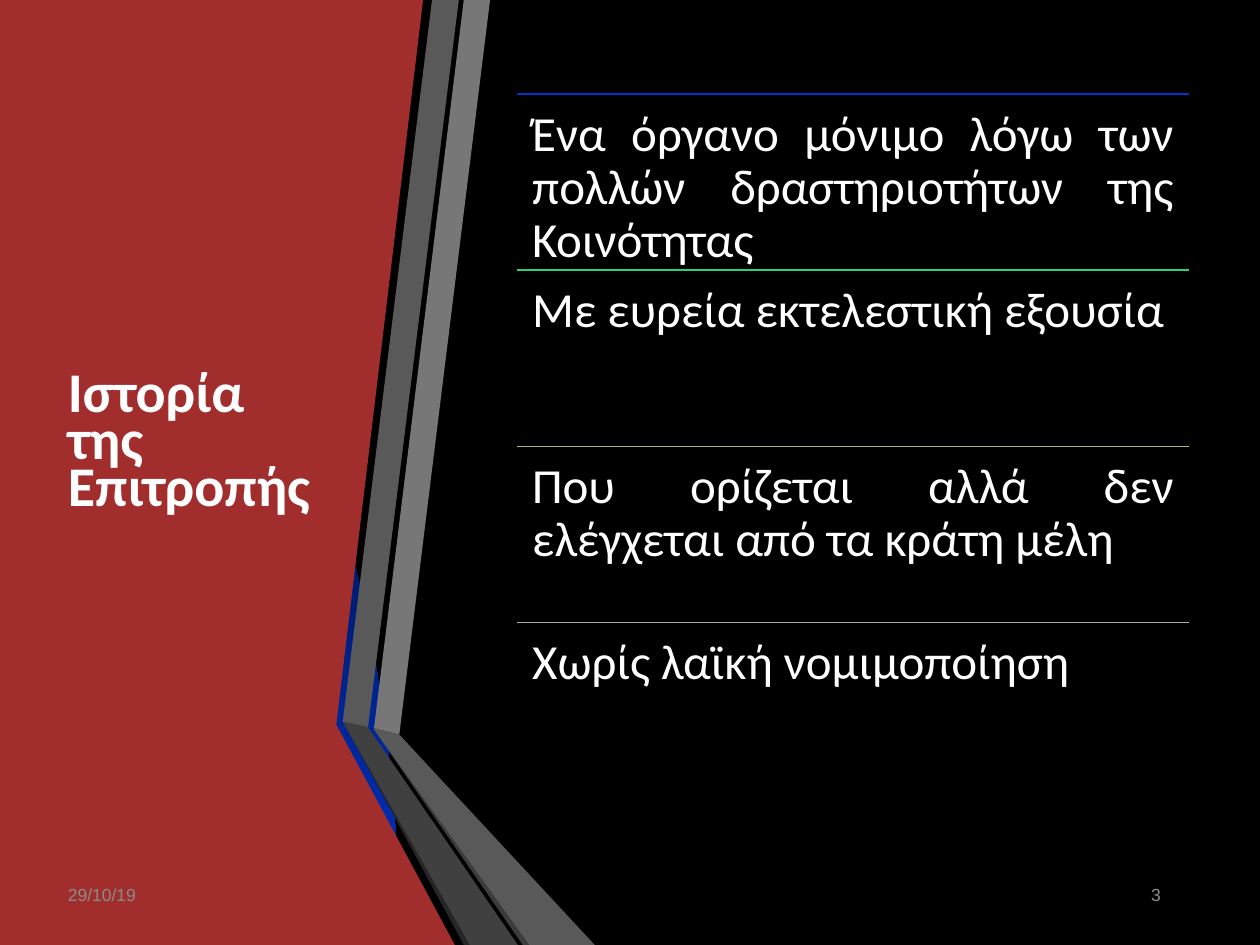
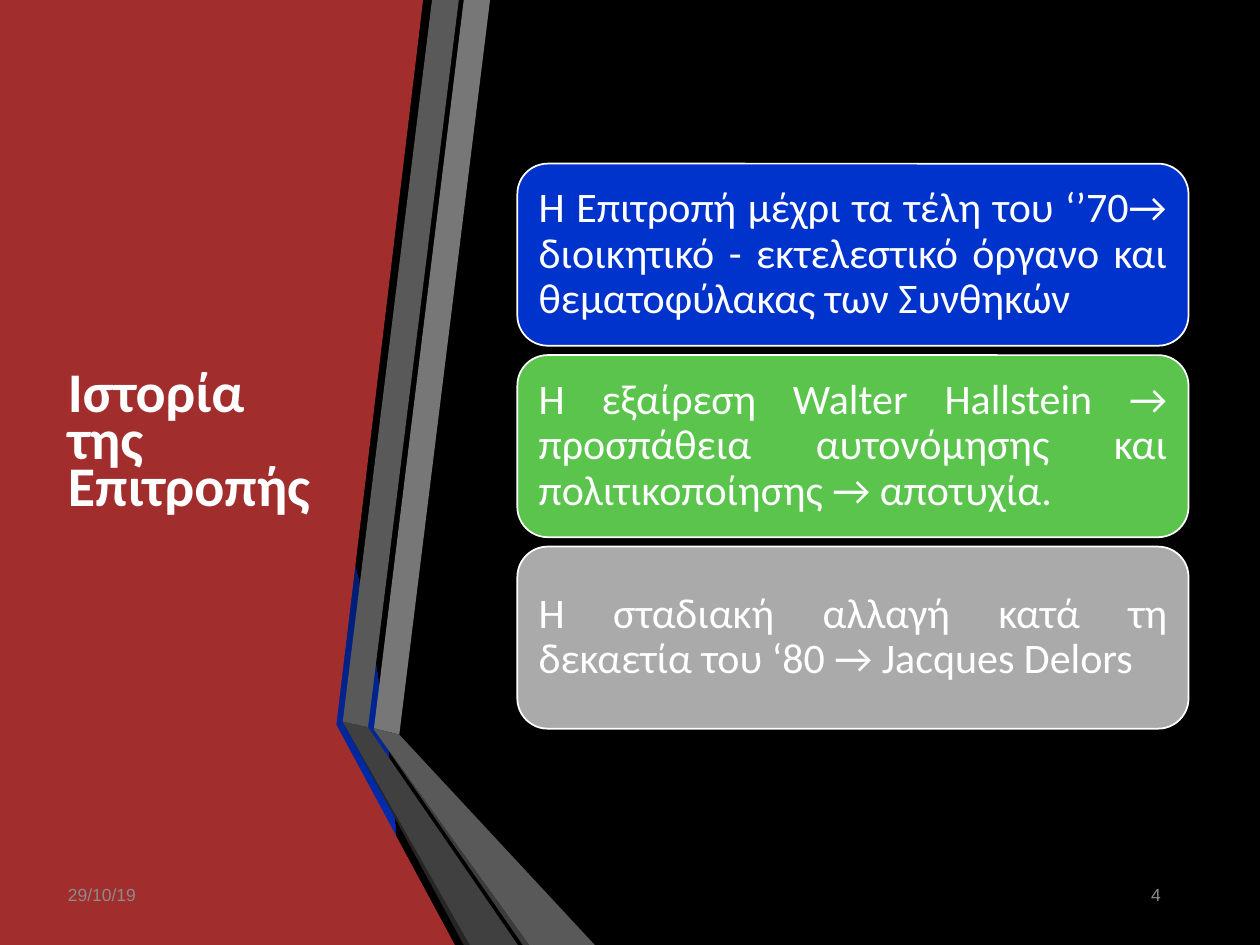
import pptx
import pptx.util
import pptx.dml.color
import pptx.enum.shapes
import pptx.enum.text
import pptx.oxml.xmlchemy

Cm = pptx.util.Cm
Pt = pptx.util.Pt
RGBColor = pptx.dml.color.RGBColor
Align = pptx.enum.text.PP_ALIGN
Anchor = pptx.enum.text.MSO_ANCHOR

BLACK = RGBColor(0x00, 0x00, 0x00)
WHITE = RGBColor(0xFF, 0xFF, 0xFF)
BLUE = RGBColor(0x00, 0x33, 0xCC)
RED = RGBColor(0xA2, 0x2D, 0x2D)
MINT = RGBColor(0x2A, 0xD0, 0x7D)
OLIVE = RGBColor(0xA5, 0xB7, 0x6F)
GREEN = RGBColor(0x5B, 0xC4, 0x4D)
SILVER = RGBColor(0xAA, 0xAA, 0xAA)
MUTED = RGBColor(0x8C, 0x8C, 0x8C)
LIGHT = RGBColor(0x77, 0x77, 0x77)
GREY = RGBColor(0x59, 0x59, 0x59)
DARK = RGBColor(0x40, 0x40, 0x40)
EDGE = RGBColor(0x3C, 0x3C, 0x3C)
SHADE = RGBColor(0x26, 0x26, 0x26)

WIDE, HIGH = 25.4, 19.05
LEFT, SPAN = 10.43, 13.53
TITLE = "Ιστορία της Επιτροπής"
DATE = "29/10/19"

CURVE = [(0, HIGH)]
for step in range(33):
    t = step / 32
    u = 1 - t
    CURVE.append((3 * u * u * t * 4.45 + (3 * u * t * t + t ** 3) * 8.05,
                  (u ** 3 + 3 * u * u * t) * 2.34 + 3 * u * t * t * 9.83 + t ** 3 * HIGH))

BANDS = [
    (RED, [(0, 0), (8.53, 0), (6.78, 14.61), (9.17, HIGH), (0, HIGH)]),
    (LIGHT, [(7.54, 14.68), (8.05, 14.81), (9.88, 0), (9.35, 0)]),
    (GREY, [(9.25, 0), (8.71, 0), (6.91, 14.55), (7.42, 14.66)]),
    (SHADE, [(6.91, 14.55), (9.35, HIGH), (9.47, HIGH)]),
    (EDGE, [(7.54, 14.71), (10.54, HIGH), (10.67, HIGH)]),
    (GREY, [(7.54, 14.71), (10.67, HIGH), (11.99, HIGH), (8.05, 14.81), (7.54, 14.68)]),
    (DARK, [(10.44, HIGH), (7.52, 14.81), (7.42, 14.66), (6.91, 14.55), (9.47, HIGH)]),
]

POINTS = [
    (BLUE, "Ένα όργανο μόνιμο λόγω των πολλών δραστηριοτήτων της Κοινότητας"),
    (MINT, "Με ευρεία εκτελεστική εξουσία"),
    (OLIVE, "Που ορίζεται αλλά δεν ελέγχεται από τα κράτη μέλη"),
    (SILVER, "Χωρίς λαϊκή νομιμοποίηση"),
]
CARDS = [
    (BLUE, "Η Επιτροπή μέχρι τα τέλη του ‘’70→ διοικητικό - εκτελεστικό όργανο και θεματοφύλακας των Συνθηκών"),
    (GREEN, "Η εξαίρεση Walter Hallstein → προσπάθεια αυτονόμησης και πολιτικοποίησης → αποτυχία."),
    (SILVER, "Η σταδιακή αλλαγή κατά τη δεκαετία του ‘80 → Jacques Delors"),
]


def trace(slide, spots):
    spots = [(Cm(x), Cm(y)) for x, y in spots]
    pen = slide.shapes.build_freeform(*spots[0], scale=1.0)
    pen.add_line_segments(spots[1:], close=True)
    shape = pen.convert_to_shape()
    shape.line.fill.background()
    shape.shadow.inherit = False
    return shape


def write(shape, text, size, align, tone=WHITE, face="Calibri", bold=False,
          space=0.9, anchor=Anchor.MIDDLE, pad=(0.25, 0.13)):
    frame = shape.text_frame
    frame.word_wrap = True
    frame.auto_size = pptx.enum.text.MSO_AUTO_SIZE.NONE
    frame.vertical_anchor = anchor
    frame.margin_left = frame.margin_right = Cm(pad[0])
    frame.margin_top = frame.margin_bottom = Cm(pad[1])
    para = frame.paragraphs[0]
    para.alignment = align
    para.line_spacing = space
    run = para.add_run()
    run.text = text
    run.font.size = Pt(size)
    run.font.name = face
    run.font.bold = bold
    run.font.color.rgb = tone


deck = pptx.Presentation()
deck.slide_width = Cm(WIDE)
deck.slide_height = Cm(HIGH)

slides = []
for page in ("3", "4"):
    slide = deck.slides.add_slide(deck.slide_layouts[5])
    slides.append(slide)
    slide.background.fill.solid()
    slide.background.fill.fore_color.rgb = BLACK

    glow = trace(slide, CURVE)
    glow.fill.gradient()
    glow.fill.gradient_angle = 270
    for stop, tone, place in zip(glow.fill.gradient_stops, (BLACK, BLUE), (0, 1)):
        stop.color.rgb = tone
        stop.position = place

    for tone, spots in BANDS:
        band = trace(slide, spots)
        band.fill.solid()
        band.fill.fore_color.rgb = tone

    title = slide.shapes.title
    title.left, title.top, title.width, title.height = Cm(1.12), Cm(1.9), Cm(5.79), Cm(14.17)
    write(title, TITLE, 32, Align.LEFT, bold=True, space=0.7)
    title.element.getparent().append(title.element)

    for left, width, text, align in ((1.12, 6.35, DATE, Align.LEFT), (21.39, 2.26, page, Align.RIGHT)):
        foot = slide.shapes.add_textbox(Cm(left), Cm(17.53), Cm(width), Cm(1.02))
        write(foot, text, 10, align, tone=MUTED, face="Arial", space=1.0)

first, second = slides

for row, (tone, text) in enumerate(POINTS):
    top = Cm(1.9 + row * 3.55)
    rule = first.shapes.add_connector(pptx.enum.shapes.MSO_CONNECTOR.STRAIGHT,
                                      Cm(LEFT), top, Cm(LEFT + SPAN), top)
    rule.line.color.rgb = tone
    rule.line.width = Pt(1)
    rule.element.spPr.append(pptx.oxml.xmlchemy.OxmlElement("a:effectLst"))
    box = first.shapes.add_textbox(Cm(LEFT), top, Cm(SPAN), Cm(3.55))
    write(box, text, 28, Align.JUSTIFY, anchor=Anchor.TOP, pad=(0.3, 0.3))

for row, (tone, text) in enumerate(CARDS):
    card = second.shapes.add_shape(pptx.enum.shapes.MSO_SHAPE.ROUNDED_RECTANGLE,
                                   Cm(LEFT), Cm(3.3 + row * 3.86), Cm(SPAN), Cm(3.67))
    card.fill.solid()
    card.fill.fore_color.rgb = tone
    card.line.color.rgb = WHITE
    card.line.width = Pt(1)
    card.shadow.inherit = False
    write(card, text, 24, Align.JUSTIFY, pad=(0.25, 0.25))

deck.save("out.pptx")
